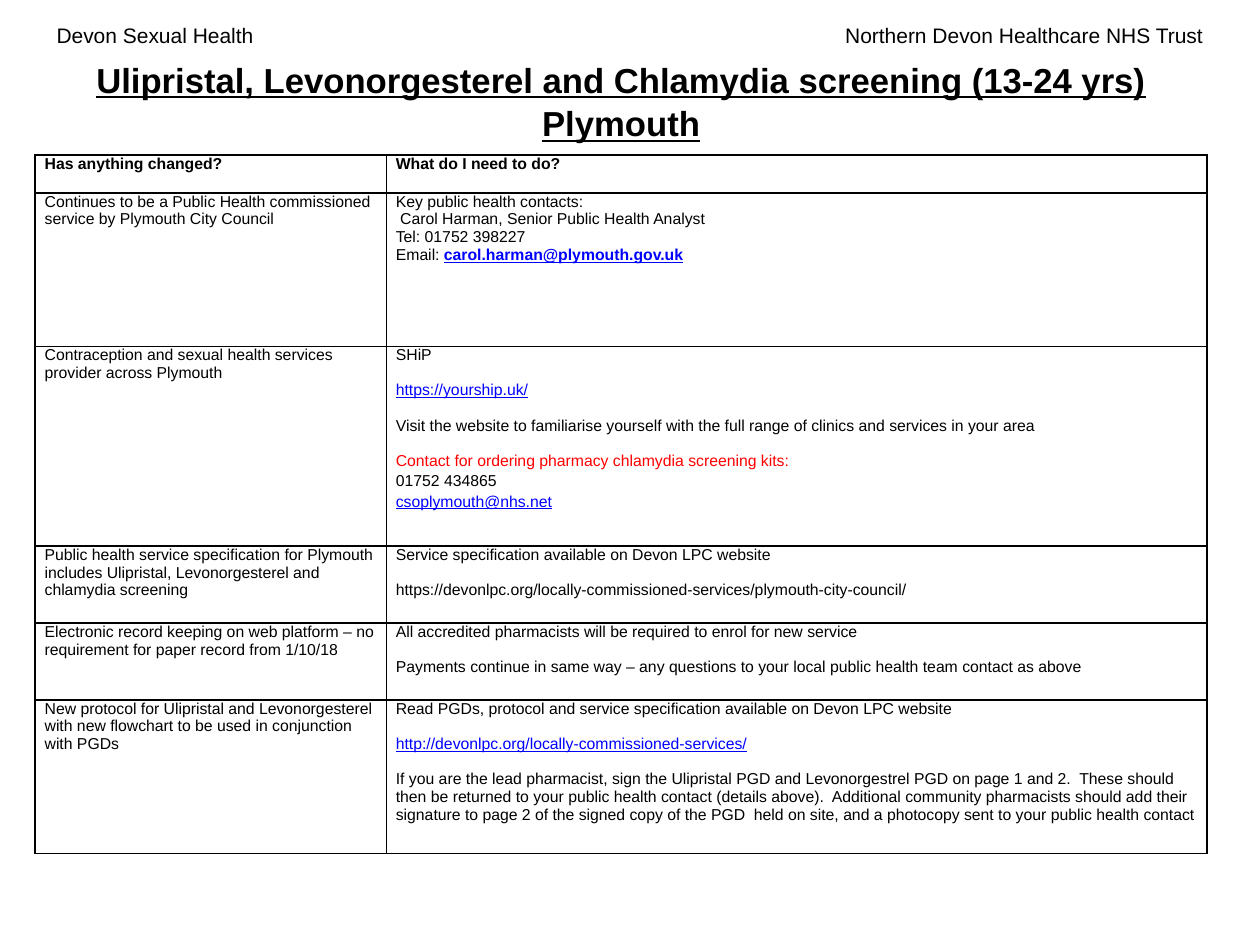
import pptx
import pptx.util
import pptx.dml.color
import pptx.enum.text
import pptx.oxml
import pptx.oxml.ns

Cm, Pt = pptx.util.Cm, pptx.util.Pt
ALIGN = pptx.enum.text.PP_ALIGN
ANCHOR = pptx.enum.text.MSO_ANCHOR

COLORS = {"text": "000000", "link": "0000FF", "alert": "FF0000",
          "border": "000000", "paper": "FFFFFF"}
FONT = "Arial"
LINK = {"color": "link", "underline": True}
GAP = {"before": 10.1}

TITLE = "Ulipristal, Levonorgesterel and Chlamydia screening (13-24 yrs) Plymouth"
# text, left, width, alignment
HEADERS = [
    ("Devon Sexual Health", 0.89, 7.72, ALIGN.LEFT),
    ("Northern Devon Healthcare NHS Trust", 14.48, 10.03, ALIGN.RIGHT),
]

# Each cell is a list of paragraphs: (runs, paragraph format); a run is (text, format).
BOLD = {"bold": True}
ROWS = [
    (0.77,
     [([("Has anything changed?", BOLD)], {})],
     [([("What do I need to do?", BOLD)], {})]),
    (3.09,
     [([("Continues to be a Public Health commissioned service by Plymouth City Council", {})], {})],
     [([("Key public health contacts:", {})], {}),
      ([(" Carol Harman, Senior Public Health Analyst", {})], {}),
      ([("Tel: 01752 398227", {})], {}),
      ([("Email: ", {}), ("carol.harman@plymouth.gov.uk", LINK | BOLD)], {})]),
    (4.03,
     [([("Contraception and sexual health services provider across Plymouth", {})], {})],
     [([("SHiP", {})], {}),
      ([("https://yourship.uk/", LINK)], GAP),
      ([("Visit the website to familiarise yourself with the full range of clinics "
         "and services in your area", {})], GAP),
      ([("Contact for ordering pharmacy chlamydia screening kits:", {"color": "alert"})], GAP),
      ([("01752 434865", {})], {"spacing": 1.15}),
      ([("csoplymouth@nhs.net", LINK)], {"spacing": 1.15})]),
    (1.55,
     [([("Public health service specification for Plymouth includes Ulipristal, "
         "Levonorgesterel and chlamydia screening", {})], {})],
     [([("Service specification available on Devon LPC website", {})], {}),
      ([("https://devonlpc.org/locally-commissioned-services/plymouth-city-council/", {})], GAP)]),
    (1.55,
     [([("Electronic record keeping on web platform – no requirement for paper record "
         "from 1/10/18", {})], {})],
     [([("All accredited pharmacists will be required to enrol for new service", {})], {}),
      ([("Payments continue in same way – any questions to your local public health team "
         "contact as above", {})], GAP)]),
    (3.1,
     [([("New protocol for Ulipristal and Levonorgesterel with new flowchart to be used in "
         "conjunction with PGDs", {})], {})],
     [([("Read PGDs, protocol and service specification available on Devon LPC website", {})], {}),
      ([("http://devonlpc.org/locally-commissioned-services/", LINK)], GAP),
      ([("If you are the lead pharmacist, sign the Ulipristal PGD and Levonorgestrel PGD on "
         "page 1 and 2.  These should then be returned to your public health contact (details "
         "above).  Additional community pharmacists should add their signature to page 2 of the "
         "signed copy of the PGD  held on site, and a photocopy sent to your public health "
         "contact", {})], GAP)]),
]
COLUMNS = [7.08, 16.54]


def rgb(name):
    return pptx.dml.color.RGBColor.from_string(COLORS[name])


def add_text(p, text, size=9, color="text", bold=False, underline=False):
    r = p.add_run()
    r.text = text
    f = r.font
    f.name, f.size, f.bold, f.underline = FONT, Pt(size), bold, underline
    f.color.rgb = rgb(color)


def set_borders(cell, width=1):
    tcPr = cell._tc.get_or_add_tcPr()
    for i, side in enumerate(("lnL", "lnR", "lnT", "lnB")):
        tcPr.insert(i, pptx.oxml.parse_xml(
            f'<a:{side} {pptx.oxml.ns.nsdecls("a")} w="{Pt(width)}"><a:solidFill>'
            f'<a:srgbClr val="{COLORS["border"]}"/></a:solidFill></a:{side}>'))


def fill_cell(cell, paragraphs):
    cell.margin_left = cell.margin_right = Cm(0.19)
    cell.margin_top = cell.margin_bottom = 0
    cell.fill.solid()
    cell.fill.fore_color.rgb = rgb("paper")
    set_borders(cell)
    tf = cell.text_frame
    for i, (runs, layout) in enumerate(paragraphs):
        p = tf.add_paragraph() if i else tf.paragraphs[0]
        p.space_before = Pt(layout.get("before", 0))
        p.line_spacing = layout.get("spacing", 1.0)
        for text, style in runs:
            add_text(p, text, **style)


def main():
    prs = pptx.Presentation()
    prs.slide_width, prs.slide_height = Cm(25.4), Cm(19.05)
    s = prs.slides.add_slide(prs.slide_layouts[5])

    for text, left, width, align in HEADERS:
        tf = s.shapes.add_textbox(Cm(left), Cm(0.33), Cm(width), Cm(0.76)).text_frame
        tf.word_wrap = True
        tf.paragraphs[0].alignment = align
        add_text(tf.paragraphs[0], text, size=12)

    title = s.shapes.title
    title.left, title.top, title.width, title.height = Cm(1.09), Cm(1.17), Cm(22.86), Cm(1.7)
    tf = title.text_frame
    tf.margin_top = tf.margin_bottom = 0
    tf.vertical_anchor = ANCHOR.MIDDLE
    p = tf.paragraphs[0]
    p.alignment = ALIGN.CENTER
    p.line_spacing = 1.05
    add_text(p, TITLE, size=19.8, bold=True, underline=True)

    height = sum(row[0] for row in ROWS)
    table = s.shapes.add_table(len(ROWS), len(COLUMNS), Cm(0.71), Cm(3.12),
                               Cm(sum(COLUMNS)), Cm(height)).table
    table.first_row = table.horz_banding = False
    for column, width in zip(table.columns, COLUMNS):
        column.width = Cm(width)
    for i, (row_height, *cells) in enumerate(ROWS):
        table.rows[i].height = Cm(row_height)
        for j, paragraphs in enumerate(cells):
            fill_cell(table.cell(i, j), paragraphs)

    prs.save("out.pptx")


if __name__ == "__main__":
    main()
